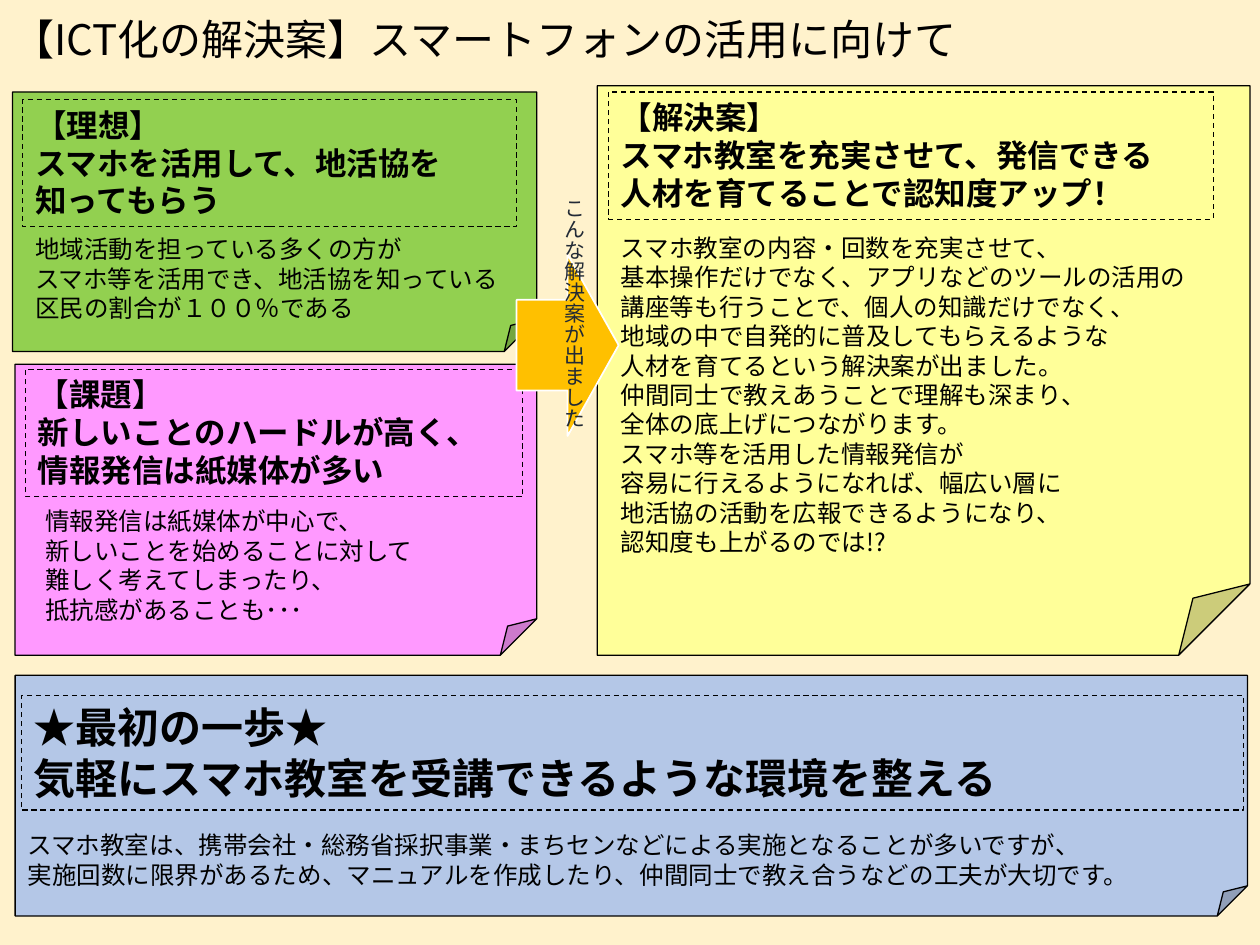
from pptx import Presentation
from pptx.dml.color import RGBColor
from pptx.enum.dml import MSO_LINE
from pptx.enum.shapes import MSO_SHAPE
from pptx.enum.text import MSO_ANCHOR, PP_ALIGN
from pptx.oxml.ns import qn
from pptx.util import Inches, Pt
from lxml.etree import SubElement

FONT = "Noto Sans CJK JP"
BLACK = "000000"
LINE_HEIGHT = 1.2

# Each card: box, colour, heading size, heading box, body box, heading, body.
# Heading and body boxes are offsets from the card's top left corner.
CARDS = [
    ((0.1, 0.73, 4.16, 2.06), "92D050", 18,
     (0.08, 0.06, 3.92, 1.01), (0.08, 1.08, 3.94, 0.81),
     ["【理想】", "スマホを活用して、地活協を", "知ってもらう"],
     ["地域活動を担っている多くの方が",
      "スマホ等を活用でき、地活協を知っている区民の割合が１００％である"]),
    ((0.12, 2.89, 4.14, 2.31), "FF99FF", 18,
     (0.08, 0.04, 3.95, 1.01), (0.14, 1.08, 3.84, 1.04),
     ["【課題】", "新しいことのハードルが高く、", "情報発信は紙媒体が多い"],
     ["情報発信は紙媒体が中心で、",
      "新しいことを始めることに対して",
      "難しく考えてしまったり、",
      "抵抗感があることも･･･"]),
    ((4.74, 0.68, 5.18, 4.52), "FFFF99", 18,
     (0.09, 0.05, 4.8, 1.01), (0.09, 1.12, 4.8, 3),
     ["【解決案】", "スマホ教室を充実させて、発信できる",
      "人材を育てることで認知度アップ！"],
     ["スマホ教室の内容・回数を充実させて、",
      "基本操作だけでなく、アプリなどのツールの活用の講座等も行うことで、個人の知識だけでなく、",
      "地域の中で自発的に普及してもらえるような",
      "人材を育てるという解決案が出ました。",
      "仲間同士で教えあうことで理解も深まり、\v全体の底上げにつながります。",
      "スマホ等を活用した情報発信が",
      "容易に行えるようになれば、幅広い層に",
      "地活協の活動を広報できるようになり、",
      "認知度も上がるのでは!?"]),
    ((0.12, 5.36, 9.78, 1.91), "B4C7E7", 24,
     (0.05, 0.16, 9.7, 0.91), (0, 1.18, 9.78, 0.6),
     ["★最初の一歩★", "気軽にスマホ教室を受講できるような環境を整える"],
     ["スマホ教室は、携帯会社・総務省採択事業・まちセンなどによる実施となることが多いですが、",
      "実施回数に限界があるため、マニュアルを作成したり、仲間同士で教え合うなどの工夫が大切です。"]),
]


def color(hex_value):
    return RGBColor.from_string(hex_value)


def inches(box):
    return [Inches(length) for length in box]


def inside(box, part):
    """Turn a box given as an offset from another into a slide position."""
    return box[0] + part[0], box[1] + part[1], part[2], part[3]


def add_box(page, kind, box, fill=None, line=BLACK, width=0.75):
    shape = page.shapes.add_shape(kind, *inches(box))
    shape.shadow.inherit = False
    if fill:
        shape.fill.solid()
        shape.fill.fore_color.rgb = color(fill)
    else:
        shape.fill.background()
    shape.line.color.rgb = color(line)
    shape.line.width = Pt(width)
    return shape


def set_fold(card, share):
    """Size the folded corner, which python-pptx lists no adjustment for."""
    guides = card._element.spPr.find(qn("a:prstGeom")).find(qn("a:avLst"))
    guide = SubElement(guides, qn("a:gd"))
    guide.set("name", "adj")
    guide.set("fmla", f"val {round(share * 100000)}")


def write(shape, lines, size, bold=False, ink=BLACK,
          align=PP_ALIGN.LEFT, anchor=MSO_ANCHOR.TOP):
    frame = shape.text_frame
    frame.word_wrap = True
    frame.vertical_anchor = anchor
    frame.text = "\n".join(lines)
    for para in frame.paragraphs:
        para.alignment = align
        para.line_spacing = Pt(size * LINE_HEIGHT)
        para.font.name = FONT
        para.font.size = Pt(size)
        para.font.bold = bold
        para.font.color.rgb = color(ink)
        defaults = para._p.pPr.find(qn("a:defRPr"))
        SubElement(defaults, qn("a:ea")).set("typeface", FONT)


def add_text(page, box, lines, size, **style):
    shape = page.shapes.add_textbox(*inches(box))
    write(shape, lines, size, **style)
    return shape


def add_card(page, box, fill, size, heading_box, body_box, heading, body):
    card = add_box(page, MSO_SHAPE.FOLDED_CORNER, box, fill)
    set_fold(card, 0.125)
    frame = add_box(page, MSO_SHAPE.RECTANGLE, inside(box, heading_box))
    frame.line.dash_style = MSO_LINE.DASH
    write(frame, heading, size, bold=True)
    add_text(page, inside(box, body_box), body, 14)


def add_arrow(page, box):
    """Place the arrow with its vertical caption across it."""
    add_box(page, MSO_SHAPE.RIGHT_ARROW, box, "FFC000", "FFFFFF", 1)
    caption = add_text(page, inside(box, (0.21, -0.55, 0.4, 2.51)),
                       ["こんな解決案が出ました"], 12, ink="222A35",
                       align=PP_ALIGN.CENTER)
    caption.text_frame._txBody.bodyPr.set("vert", "eaVert")


def main():
    deck = Presentation()
    deck.slide_width, deck.slide_height = Inches(10), Inches(7.5)
    page = deck.slides.add_slide(deck.slide_layouts[6])
    page.background.fill.solid()
    page.background.fill.fore_color.rgb = color("FFF2CC")

    add_text(page, (0, -0.01, 8.91, 0.64),
             ["【ICT化の解決案】スマートフォンの活用に向けて"], 24,
             anchor=MSO_ANCHOR.MIDDLE)
    for card in CARDS:
        add_card(page, *card)
    add_arrow(page, (4.1, 2.02, 0.81, 1.44))
    deck.save("out.pptx")


if __name__ == "__main__":
    main()
